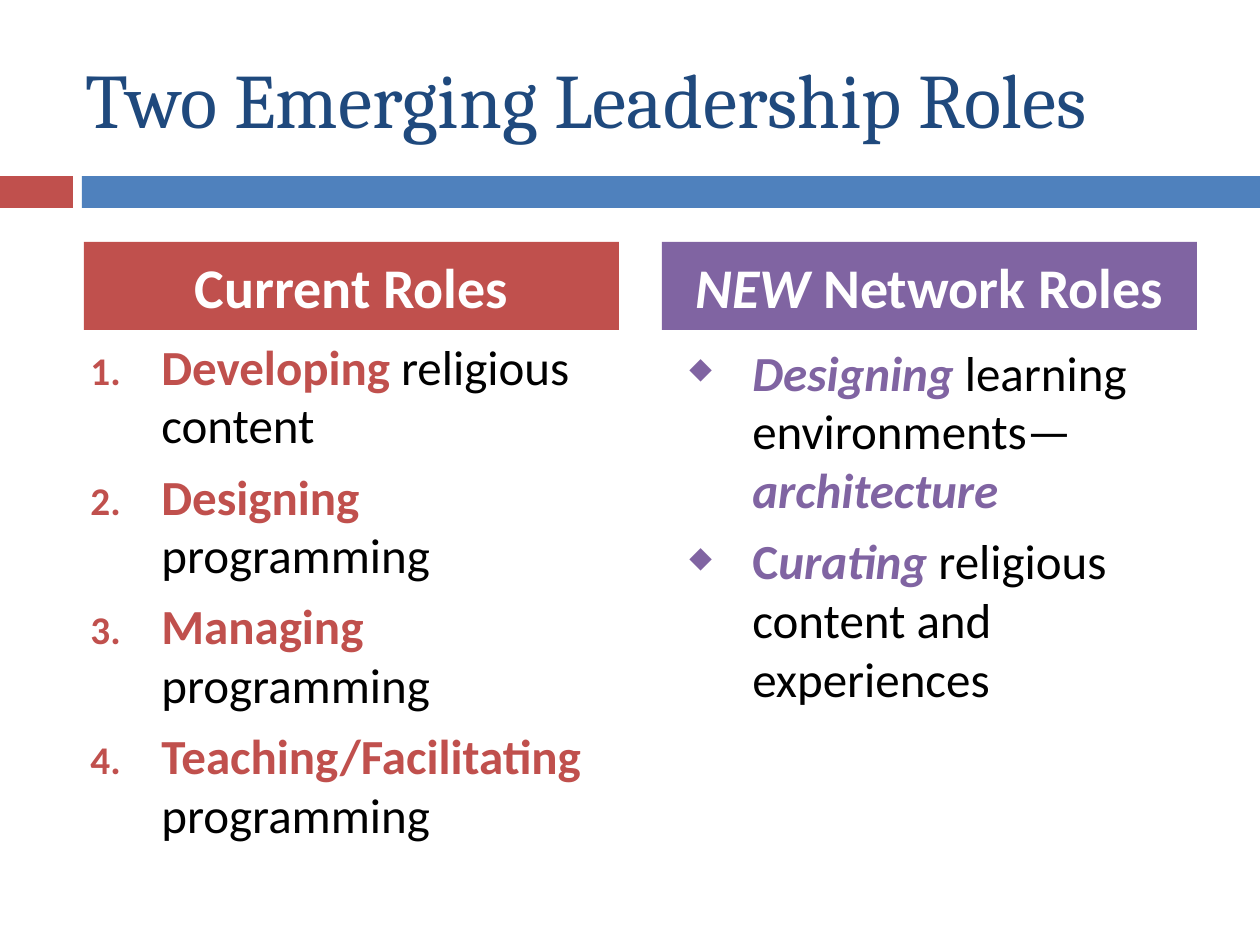
"""Build the slide on current and new leadership roles."""
from lxml import etree
from pptx import Presentation
from pptx import util as u
from pptx.dml.color import RGBColor
from pptx.enum import shapes, text
from pptx.oxml.ns import qn

RED = RGBColor(0xC0, 0x50, 0x4D)
BLUE = RGBColor(0x4F, 0x81, 0xBD)
NAVY = RGBColor(0x1F, 0x49, 0x7D)
PURPLE = RGBColor(0x80, 0x64, 0xA2)
BLACK = RGBColor(0, 0, 0)
WHITE = RGBColor(255, 255, 255)
BOLD, ITAL = "b", "i"


def px(num):
    return round(num * u.Inches(1) / 126)


class Deck:
    """Holds the style and the current slide."""

    body, head = "Calibri", "Cambria"

    def __init__(self, wide, high):
        self.prs = Presentation()
        self.prs.slide_width, self.prs.slide_height = px(wide), px(high)
        self.slide = self.prs.slides.add_slide(self.prs.slide_layouts[6])

    def bar(self, left, top, wide, high, fill):
        box = self.slide.shapes.add_shape(
            shapes.MSO_SHAPE.RECTANGLE, px(left), px(top), px(wide), px(high))
        box.shadow.inherit = False
        box.fill.solid()
        box.fill.fore_color.rgb = fill
        box.line.fill.background()
        return box

    def fill_in(self, para, runs, size, font):
        for words, color, style in runs:
            run = para.add_run()
            run.text = words
            run.font.name, run.font.size = font, u.Pt(size)
            run.font.color.rgb = color
            run.font.bold, run.font.italic = BOLD in style, ITAL in style

    def label(self, left, top, wide, high, fill, runs):
        frame = self.bar(left, top, wide, high, fill).text_frame
        frame.word_wrap = True
        frame.vertical_anchor = text.MSO_ANCHOR.MIDDLE
        para = frame.paragraphs[0]
        para.alignment = text.PP_ALIGN.CENTER
        self.fill_in(para, runs, 32, self.body)

    def frame(self, left, top, wide, high):
        box = self.slide.shapes.add_textbox(px(left), px(top), px(wide), px(high))
        box.text_frame.word_wrap = True
        return box.text_frame

    def title(self, left, top, wide, high, words):
        frame = self.frame(left, top, wide, high)
        frame.vertical_anchor = text.MSO_ANCHOR.MIDDLE
        self.fill_in(frame.paragraphs[0], [(words, NAVY, "")], 44, self.head)

    def mark(self, para, margin, hang, color, pct, kind, **attrs):
        props = para._p.get_or_add_pPr()
        props.set("marL", str(px(margin)))
        props.set("indent", str(-px(hang)))
        tint = etree.SubElement(props, qn("a:buClr"))
        etree.SubElement(tint, qn("a:srgbClr"), val=str(color))
        etree.SubElement(props, qn("a:buSzPct"), val=str(pct * 1000))
        etree.SubElement(props, qn(kind), **attrs)

    def items(self, left, top, wide, high, rows, *look, **attrs):
        frame = self.frame(left, top, wide, high)
        for num, runs in enumerate(rows):
            para = frame.add_paragraph() if num else frame.paragraphs[0]
            self.mark(para, *look, **attrs)
            para.space_before = u.Pt(7 if num else 0)
            self.fill_in(para, runs, 28, self.body)

    def save(self):
        self.prs.save("out.pptx")


def main():
    deck = Deck(1260, 945)
    deck.bar(0, 176, 73, 32, RED)
    deck.bar(82, 176, 1178, 32, BLUE)
    deck.title(73, 38, 1124, 120, "Two Emerging Leadership Roles")

    roles = [("Developing", "religious content"), ("Designing", "programming"),
             ("Managing", "programming"), ("Teaching/Facilitating", "programming")]
    rows = [[(verb, RED, BOLD), (" " + noun, BLACK, "")] for verb, noun in roles]
    deck.items(62, 330, 562, 567, rows, 87, 71, RED, 80,
               "a:buAutoNum", type="arabicPeriod")

    both = BOLD + ITAL
    rows = [[("Designing ", PURPLE, both), ("learning environments—", BLACK, ""),
             ("architecture", PURPLE, both)],
            [("C", PURPLE, BOLD), ("urating", PURPLE, both),
             (" religious content and experiences", BLACK, "")]]
    deck.items(662, 336, 535, 494, rows, 78, 63, PURPLE, 60, "a:buChar", char="◆")

    deck.label(84, 242, 535, 88, RED, [("Current Roles", WHITE, BOLD)])
    deck.label(662, 242, 535, 88, PURPLE,
               [("NEW", WHITE, both), (" Network Roles", WHITE, BOLD)])
    deck.save()


if __name__ == "__main__":
    main()
